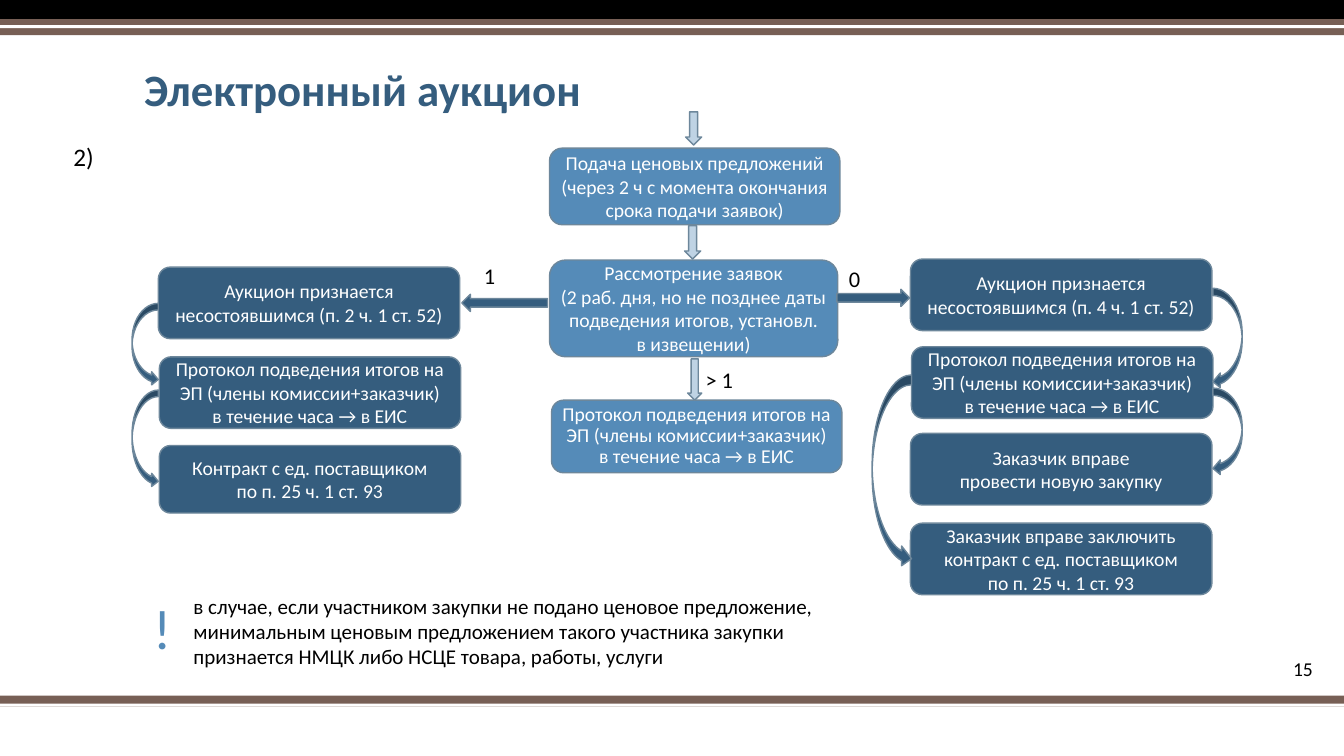
"""Build the electronic auction flowchart slide."""
from pptx import Presentation
from pptx.dml.color import RGBColor
from pptx.enum.shapes import MSO_SHAPE
from pptx.enum.text import MSO_ANCHOR, PP_ALIGN
from pptx.util import Inches, Pt

RECTANGLE = MSO_SHAPE.RECTANGLE
ROUNDED = MSO_SHAPE.ROUNDED_RECTANGLE
DOWN, RIGHT, LEFT = MSO_SHAPE.DOWN_ARROW, MSO_SHAPE.RIGHT_ARROW, MSO_SHAPE.LEFT_ARROW
CURVED_LEFT, CURVED_RIGHT = MSO_SHAPE.CURVED_LEFT_ARROW, MSO_SHAPE.CURVED_RIGHT_ARROW
MIDDLE, BOTTOM = MSO_ANCHOR.MIDDLE, MSO_ANCHOR.BOTTOM
ALIGN_LEFT, ALIGN_CENTER, ALIGN_RIGHT = PP_ALIGN.LEFT, PP_ALIGN.CENTER, PP_ALIGN.RIGHT
BLACK, WHITE, BROWN = "000000", "FFFFFF", "775F55"
NAVY, BLUE, PALE, OUTLINE = "355D7E", "558BB8", "BFD3E4", "6D879B"

presentation = Presentation()
presentation.slide_width = Inches(13.33)
presentation.slide_height = Inches(7.5)
slide = presentation.slides.add_slide(presentation.slide_layouts[5])


def draw(kind, bounds, fill, line=OUTLINE):
    """Add a filled preset shape, outlined unless line is None."""
    shape = slide.shapes.add_shape(kind, *map(Inches, bounds))
    shape.shadow.inherit = False
    shape.fill.solid()
    shape.fill.fore_color.rgb = RGBColor.from_string(fill)
    if line:
        shape.line.color.rgb = RGBColor.from_string(line)
        shape.line.width = Pt(1)
    else:
        shape.line.fill.background()
    return shape


def write(shape, text, size=14, color=BLACK, bold=False, align=ALIGN_LEFT,
          anchor=MIDDLE, inset=0.1, spacing=1.0):
    """Fill a shape with formatted text, one paragraph per line."""
    frame = shape.text_frame
    frame.text = text
    frame.word_wrap = True
    frame.vertical_anchor = anchor
    frame.margin_left = frame.margin_right = Inches(inset)
    frame.margin_top = frame.margin_bottom = Inches(0.05)
    for paragraph in frame.paragraphs:
        paragraph.alignment = align
        paragraph.line_spacing = spacing
        font = paragraph.runs[0].font
        font.name, font.size, font.bold = "Calibri", Pt(size), bold
        font.color.rgb = RGBColor.from_string(color)


bands = [
    (6.9, 0.11, BROWN), (6.98, 0.03, WHITE),
    (0, 0.19, BLACK), (0.19, 0.16, BROWN), (0.25, 0.03, WHITE),
]
for top, height, color in bands:
    draw(RECTANGLE, (0, top, 13.33, height), color, line=None)

title = slide.shapes.title
title.left, title.top = Inches(1.33), Inches(0.52)
title.width, title.height = Inches(10), Inches(0.68)
write(title, "Электронный аукцион", size=32, color=NAVY, bold=True,
      anchor=BOTTOM, spacing=0.9)

protocol = "Протокол подведения итогов на ЭП (члены комиссии+заказчик)\nв течение часа → в ЕИС"
failed = "Аукцион признается несостоявшимся (п. {} ч. 1 ст. 52)"
contract_clause = "по п. 25 ч. 1 ст. 93"
steps = [
    ((5.45, 1.47, 2.88, 0.76), BLUE, 0.04, 1.0,
     "Подача ценовых предложений (через 2 ч с момента окончания срока подачи заявок)"),
    ((5.45, 2.58, 2.86, 0.96), BLUE, 0.04, 1.0,
     "Рассмотрение заявок\n(2 раб. дня, но не позднее даты подведения итогов, установл.\nв извещении)"),
    ((5.47, 3.97, 2.88, 0.72), BLUE, 0, 0.9, protocol),
    ((1.57, 2.65, 2.99, 0.71), NAVY, 0, 1.0, failed.format(2)),
    ((1.58, 3.54, 2.99, 0.71), NAVY, 0.1, 1.0, protocol),
    ((1.58, 4.42, 2.99, 0.67), NAVY, 0.1, 1.0,
     "Контракт с ед. поставщиком\n" + contract_clause),
    ((9.03, 2.57, 2.99, 0.71), NAVY, 0.1, 1.0, failed.format(4)),
    ((9.04, 3.44, 2.99, 0.71), NAVY, 0.1, 1.0, protocol),
    ((9.03, 4.3, 2.99, 0.71), NAVY, 0.1, 1.0, "Заказчик вправе\nпровести новую закупку"),
    ((9.03, 5.19, 2.99, 0.71), NAVY, 0.1, 1.0,
     "Заказчик вправе заключить контракт с ед. поставщиком\n" + contract_clause),
]
for bounds, fill, inset, spacing, text in steps:
    write(draw(ROUNDED, bounds, fill), text, color=WHITE, align=ALIGN_CENTER,
          inset=inset, spacing=spacing)

arrows = [
    (DOWN, (6.8, 1.11, 0.16, 0.33), PALE),
    (DOWN, (6.79, 2.24, 0.16, 0.33), PALE),
    (DOWN, (6.82, 3.56, 0.14, 0.41), PALE),
    (LEFT, (4.58, 2.92, 0.85, 0.17), NAVY),
    (RIGHT, (8.3, 2.87, 0.72, 0.17), NAVY),
    (CURVED_RIGHT, (1.31, 3.87, 0.26, 0.97), NAVY),
    (CURVED_RIGHT, (1.31, 3.01, 0.26, 0.82), NAVY),
    (CURVED_RIGHT, (8.65, 3.72, 0.39, 1.92), NAVY),
    (CURVED_LEFT, (12.03, 2.86, 0.29, 1), NAVY),
    (CURVED_LEFT, (12.03, 3.85, 0.29, 0.87), NAVY),
]
for kind, bounds, fill in arrows:
    draw(kind, bounds, fill)

note = ("в случае, если участником закупки не подано ценовое предложение, "
        "минимальным ценовым предложением такого участника закупки "
        "признается НМЦК либо НСЦЕ товара, работы, услуги")
labels = [
    ((4.7, 2.55, 0.63, 0.37), "1", 16, BLACK, ALIGN_LEFT),
    ((8.32, 2.58, 0.63, 0.37), "0", 16, BLACK, ALIGN_LEFT),
    ((6.9, 3.58, 0.63, 0.37), "> 1", 16, BLACK, ALIGN_LEFT),
    ((0.63, 1.35, 0.79, 0.4), "2)", 18, BLACK, ALIGN_LEFT),
    ((1.42, 5.84, 0.39, 0.77), "!", 40, BLUE, ALIGN_LEFT),
    ((1.82, 5.83, 6.38, 0.86), note, 15, BLACK, ALIGN_LEFT),
    ((12.1, 6.51, 1.02, 0.25), "15", 14, BLACK, ALIGN_RIGHT),
]
for bounds, text, size, color, align in labels:
    label = slide.shapes.add_textbox(*map(Inches, bounds))
    write(label, text, size=size, color=color, align=align)

presentation.save("out.pptx")
